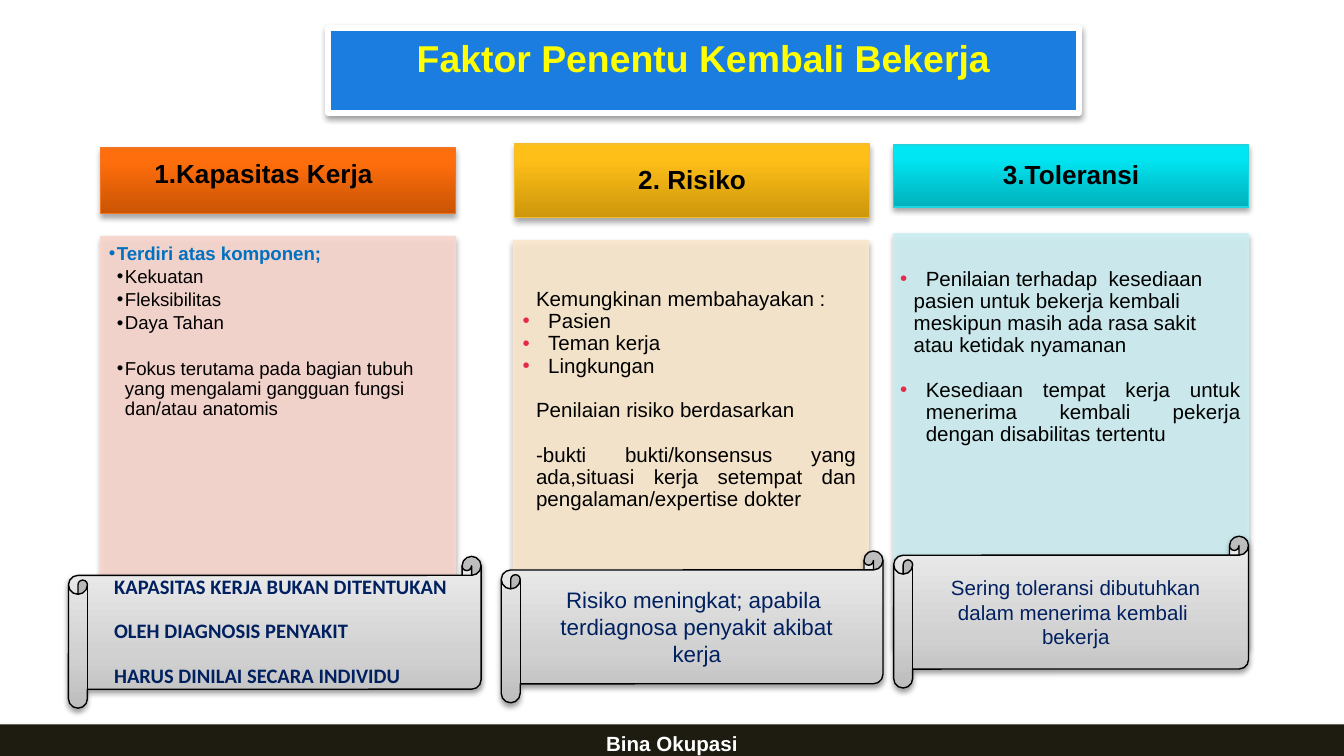
"""Build the slide on the three factors that decide a return to work."""
from dataclasses import dataclass, field
from typing import NamedTuple, Optional

from lxml import etree
from pptx import Presentation
from pptx import util as u
from pptx.dml.color import RGBColor
from pptx.enum import shapes, text as t
from pptx.oxml import ns


class Box(NamedTuple):
    left: float
    top: float
    width: float
    height: float


class Shadow(NamedTuple):
    opacity: int
    distance: float


@dataclass(frozen=True)
class Theme:
    sans: str = "Arial"
    display: str = "Calibri"
    black: str = "000000"
    white: str = "FFFFFF"
    navy: str = "002060"
    blue: str = "0070C0"
    yellow: str = "FFFF00"
    banner: str = "1C7DE1"
    footer: str = "1E1C11"
    bullet: str = "E62949"
    scroll: tuple = ((0, "BDBDBD"), (35, "D1D1D1"), (100, "EEEEEE"))
    title_size: int = 20
    header_size: int = 14
    note_size: int = 12
    body_size: int = 11
    small_size: int = 10
    soft: Shadow = Shadow(35, 1.8)
    strong: Shadow = Shadow(38, 1.6)


THEME = Theme()
CENTER, JUSTIFY, LEFT = t.PP_ALIGN.CENTER, t.PP_ALIGN.JUSTIFY, t.PP_ALIGN.LEFT
TOP, MIDDLE = t.MSO_ANCHOR.TOP, t.MSO_ANCHOR.MIDDLE
PLAIN_INSETS = (0.1, 0.05, 0.1, 0.05)


@dataclass(frozen=True)
class Style:
    size: float
    color: str = THEME.black
    bold: bool = False
    font: str = THEME.sans
    align: t.PP_ALIGN = CENTER
    spacing: float = 1.0
    after: float = 0


@dataclass(frozen=True)
class Line:
    text: str
    style: Style
    margin: float = 0
    hanging: float = 0
    before: float = 0
    bullet_color: Optional[str] = None


@dataclass(frozen=True)
class Writing:
    box: Box
    lines: list
    anchor: t.MSO_ANCHOR = TOP
    insets: tuple = PLAIN_INSETS


@dataclass(frozen=True)
class Column:
    header: Box
    gradient: tuple
    edge: str
    panel: Box
    tint: str
    scroll: Box
    note: list
    writings: list = field(default_factory=list)


HEADING = Style(THEME.header_size, bold=True, spacing=0.9, after=4.9)
SIDE_HEADING = Style(THEME.header_size, bold=True, align=LEFT)
BODY = Style(THEME.body_size, align=JUSTIFY, spacing=0.9)
COMPONENT = Style(THEME.small_size, align=LEFT, spacing=0.9, after=1.5)
COMPONENT_TITLE = Style(THEME.small_size, THEME.blue, True, align=LEFT, spacing=0.9, after=1.5)
CAPITALS = Style(THEME.body_size, THEME.navy, True, THEME.display, LEFT, 0.9)
RISK_NOTE = Style(THEME.note_size, THEME.navy)
TOLERANCE_NOTE = Style(THEME.body_size, THEME.navy)


def component(text: str, before: float = 0) -> Line:
    """Describe a second-level component line."""
    return Line(text, COMPONENT, 0.12, 0.06, before, THEME.black)


def point(text: str, before: float = 0) -> Line:
    """Describe a body line with a red bullet."""
    return Line(text, BODY, 0.19, 0.19, before, THEME.bullet)


def prose(text: str, before: float = 0, style: Style = BODY) -> Line:
    """Describe an indented line without a bullet."""
    return Line(text, style, 0.1, before=before)


def heading(text: str, box: Box) -> Writing:
    """Describe a centred column heading."""
    return Writing(box, [Line(text, HEADING)], MIDDLE, (0.11, 0.06, 0.11, 0.06))


def apply(target: object, values: dict) -> None:
    """Set each named attribute on the target."""
    for name, value in values.items():
        setattr(target, name, value)


def add_element(parent: etree.ElementBase, tag: str, **attributes: object) -> etree.ElementBase:
    """Append a drawing element with its attributes."""
    return etree.SubElement(parent, ns.qn(tag), {key: str(value) for key, value in attributes.items()})


def write(shape: object, lines: list, anchor: t.MSO_ANCHOR = TOP, insets: tuple = PLAIN_INSETS) -> None:
    """Fill a shape with formatted paragraphs."""
    frame = shape.text_frame
    sides = ("margin_left", "margin_top", "margin_right", "margin_bottom")
    apply(frame, {"word_wrap": True, "vertical_anchor": anchor,
                  **{side: u.Inches(inset) for side, inset in zip(sides, insets)}})
    for index, line in enumerate(lines):
        style = line.style
        paragraph = frame.add_paragraph() if index else frame.paragraphs[0]
        properties = paragraph._p.get_or_add_pPr()
        properties.set("marL", str(u.Inches(line.margin)))
        properties.set("indent", str(-u.Inches(line.hanging)))
        if line.bullet_color:
            add_element(add_element(properties, "a:buClr"), "a:srgbClr", val=line.bullet_color)
            add_element(properties, "a:buFont", typeface=style.font)
            add_element(properties, "a:buChar", char="•")
        apply(paragraph, {"alignment": style.align, "line_spacing": style.spacing,
                          "space_before": u.Pt(line.before), "space_after": u.Pt(style.after)})
        run = paragraph.add_run()
        run.text = line.text
        apply(run.font, {"name": style.font, "size": u.Pt(style.size), "bold": style.bold})
        run.font.color.rgb = RGBColor.from_string(style.color)


def add_block(slide: object, box: Box, fill: object, shadow: Shadow, edge: Optional[str] = None,
              edge_width: float = 0.75, opacity: int = 100,
              kind: shapes.MSO_SHAPE = shapes.MSO_SHAPE.RECTANGLE) -> object:
    """Draw a shape with a solid or gradient fill and a drop shadow."""
    shape = slide.shapes.add_shape(kind, *map(u.Inches, box))
    shape.shadow.inherit = False
    properties = shape._element.spPr
    if isinstance(fill, str):
        shape.fill.solid()
        shape.fill.fore_color.rgb = RGBColor.from_string(fill)
    else:
        shape.fill.background()
        gradient = etree.Element(ns.qn("a:gradFill"), rotWithShape="1")
        stops = add_element(gradient, "a:gsLst")
        for position, color in fill:
            add_element(add_element(stops, "a:gs", pos=position * 1000), "a:srgbClr", val=color)
        add_element(gradient, "a:lin", ang=270 * 60000, scaled=0)
        properties.replace(properties.find(ns.qn("a:noFill")), gradient)
    if edge:
        shape.line.color.rgb = RGBColor.from_string(edge)
        shape.line.width = u.Pt(edge_width)
    else:
        shape.line.fill.background()
    if opacity < 100:
        for color in properties.findall(".//" + ns.qn("a:srgbClr")):
            add_element(color, "a:alpha", val=opacity * 1000)
    outer = add_element(properties.find(ns.qn("a:effectLst")), "a:outerShdw", blurRad=u.Pt(3.1),
                        dist=u.Pt(shadow.distance), dir=90 * 60000, rotWithShape=0)
    add_element(add_element(outer, "a:srgbClr", val=THEME.black), "a:alpha", val=shadow.opacity * 1000)
    return shape


def add_column(slide: object, column: Column) -> None:
    """Draw one factor with its header, panel, writing and scroll."""
    add_block(slide, column.header, column.gradient, THEME.soft, column.edge)
    add_block(slide, column.panel, column.tint, THEME.soft, column.tint, opacity=90)
    for writing in column.writings:
        write(slide.shapes.add_textbox(*map(u.Inches, writing.box)), writing.lines, writing.anchor, writing.insets)
    scroll = add_block(slide, column.scroll, THEME.scroll, THEME.strong, THEME.black,
                       kind=shapes.MSO_SHAPE.HORIZONTAL_SCROLL)
    write(scroll, column.note, MIDDLE)


CAPACITY_PANEL = Box(0.75, 1.76, 2.64, 2.91)
RISK_HEADER = Box(3.83, 1.07, 2.64, 0.55)
TOLERANCE_HEADER = Box(6.65, 1.08, 2.64, 0.46)
COLUMNS = [
    Column(Box(0.75, 1.1, 2.64, 0.49), ((0, "CA5404"), (80, "FF6E0C"), (100, "FF6F0E")), "F07624",
           CAPACITY_PANEL, "F9D6CD", Box(0.51, 4.14, 3.07, 1.13),
           [prose("KAPASITAS KERJA BUKAN DITENTUKAN", 0, CAPITALS),
            prose("OLEH DIAGNOSIS PENYAKIT", 12, CAPITALS), prose("HARUS DINILAI SECARA INDIVIDU", 12, CAPITALS)],
           [Writing(Box(1.05, 1.12, 1.87, 0.64), [Line("1.Kapasitas Kerja", SIDE_HEADING)]),
            Writing(CAPACITY_PANEL,
                    [Line("Terdiri atas komponen;", COMPONENT_TITLE, 0.06, 0.06, 0, THEME.blue),
                     component("Kekuatan"), component("Fleksibilitas"), component("Daya Tahan"),
                     component("Fokus terutama pada bagian tubuh yang mengalami gangguan fungsi dan/atau anatomis",
                               12)], insets=(0.06, 0.06, 0.08, 0.09))]),
    Column(RISK_HEADER, ((0, "CC970B"), (80, "FFBF19"), (100, "FFC01A")), "F4BD2D",
           Box(3.82, 1.79, 2.64, 3.04), "FBE8CD", Box(3.73, 4.1, 2.84, 1.13),
           [Line("Risiko meningkat; apabila ", RISK_NOTE), Line("terdiagnosa penyakit akibat kerja", RISK_NOTE)],
           [heading("2. Risiko", RISK_HEADER),
            Writing(Box(3.79, 2.1, 2.68, 1.77),
                    [prose("Kemungkinan membahayakan :"), point("Pasien "), point("Teman kerja"),
                     point("Lingkungan"), prose("Penilaian risiko berdasarkan", 12),
                     prose("-bukti bukti/konsensus yang ada,situasi kerja setempat dan "
                           "pengalaman/expertise dokter", 12)])]),
    Column(TOLERANCE_HEADER, ((0, "01B1BB"), (80, "01E6F3"), (100, "00E9F5")), "1ED4DE",
           Box(6.65, 1.74, 2.64, 3.07), "CDEFF2", Box(6.65, 3.99, 2.64, 1.13),
           [Line("Sering toleransi dibutuhkan dalam menerima kembali ", TOLERANCE_NOTE),
            Line("bekerja", TOLERANCE_NOTE)],
           [heading("3.Toleransi", TOLERANCE_HEADER),
            Writing(Box(6.6, 1.95, 2.73, 1.62),
                    [point("Penilaian terhadap  kesediaan "), prose("pasien untuk bekerja kembali "),
                     prose("meskipun masih ada rasa sakit "), prose("atau ketidak nyamanan"),
                     point("Kesediaan tempat kerja untuk menerima kembali pekerja dengan disabilitas tertentu",
                           12)])]),
]


def main() -> None:
    """Build and save the presentation."""
    presentation = Presentation()
    apply(presentation, {"slide_width": u.Inches(10), "slide_height": u.Inches(10 * 9 / 16)})
    slide = presentation.slides.add_slide(presentation.slide_layouts[6])
    title = add_block(slide, Box(2.44, 0.21, 5.59, 0.63), THEME.banner, THEME.strong, THEME.white, 3)
    write(title, [Line("Faktor Penentu Kembali Bekerja", Style(THEME.title_size, THEME.yellow, True))])
    for column in COLUMNS:
        add_column(slide, column)
    footer = add_block(slide, Box(-0.02, 5.39, 10.04, 0.29), THEME.footer, THEME.soft)
    write(footer, [Line("Bina Okupasi", Style(THEME.body_size, THEME.white, True))])
    presentation.save("out.pptx")


if __name__ == "__main__":
    main()
